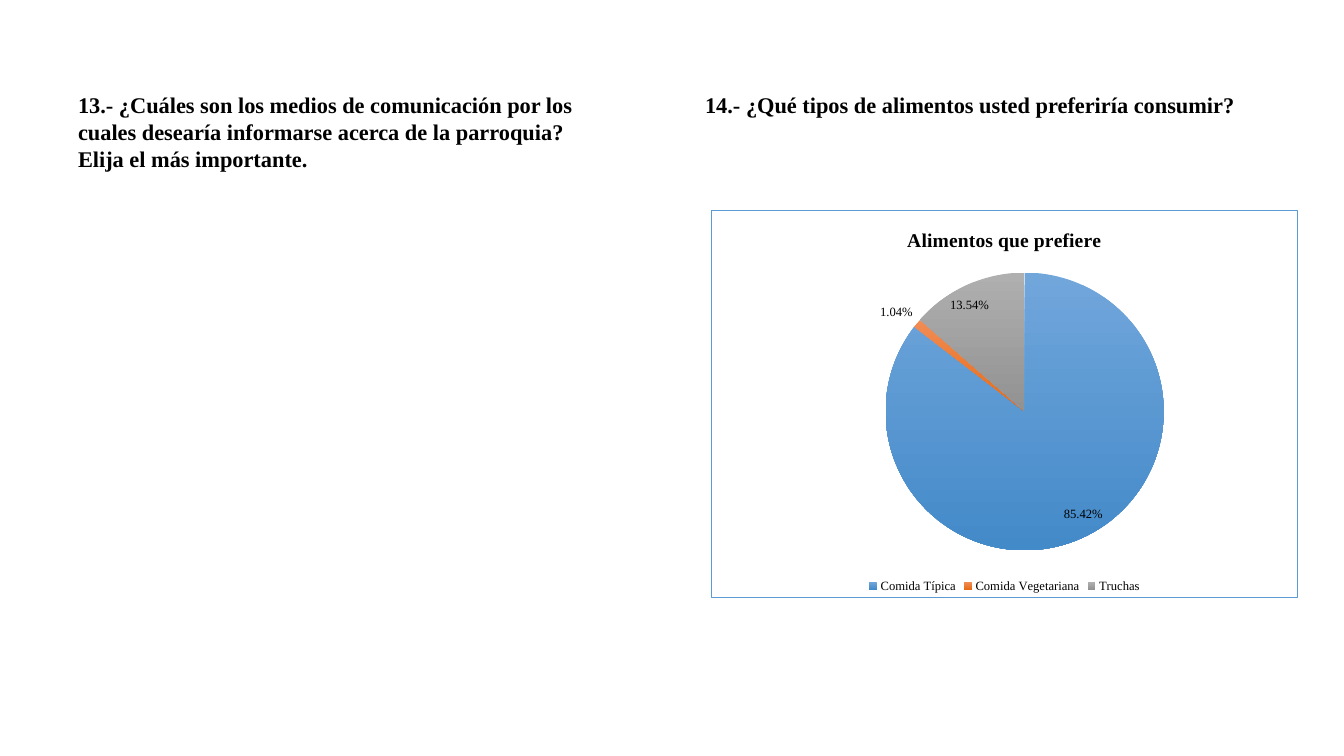
"""Builds a survey slide with two questions and a pie chart of preferred foods."""
from lxml import etree
from pptx import Presentation, util as u
from pptx.chart.data import CategoryChartData
from pptx.dml.color import RGBColor
from pptx.enum import chart as kinds, text
from pptx.oxml import ns, parse_xml

FONT = "Times New Roman"
PX = 914400 / 100.8


def px(*vals):
    return [u.Emu(round(val * PX)) for val in vals]


def paint(font, size, bold=False, hue="000000"):
    font.name, font.size, font.bold = FONT, u.Pt(size), bold
    font.color.rgb = RGBColor.from_string(hue)


deck = Presentation()
deck.slide_width, deck.slide_height = px(1344, 756)
slide = deck.slides.add_slide(deck.slide_layouts.get_by_name("Comparison"))

asks = [
    (0, (68, 86, 553, 92), True, "13.- ¿Cuáles son los medios de comunicación por los "
     "cuales desearía informarse acerca de la parroquia? Elija el más importante."),
    (1, (695, 86, 563, 37), False, "14.- ¿Qué tipos de alimentos usted preferiría consumir?"),
]
used = [ask[0] for ask in asks]
for hold in list(slide.placeholders):
    if hold.placeholder_format.idx not in used:
        hold.element.getparent().remove(hold.element)

for idx, area, wrap, words in asks:
    box = slide.placeholders[idx]
    box.left, box.top, box.width, box.height = px(*area)
    frame = box.text_frame
    frame.word_wrap = wrap
    frame.auto_size = text.MSO_AUTO_SIZE.SHAPE_TO_FIT_TEXT
    frame.vertical_anchor = text.MSO_ANCHOR.TOP
    para = frame.paragraphs[0]
    para.alignment = text.PP_ALIGN.LEFT
    para.space_before = u.Pt(0)
    run = para.add_run()
    run.text = words
    paint(run.font, 16, True)

data = CategoryChartData(number_format="0.00%")
data.categories = ["Comida Típica", "Comida Vegetariana", "Truchas"]
data.add_series("Series 1", [0.8542, 0.0104, 0.1354])
chart = slide.shapes.add_chart(
    kinds.XL_CHART_TYPE.PIE, *px(711, 210, 587, 388), data).chart
paint(chart.font, 9)

chart.has_title = True
run = chart.chart_title.text_frame.paragraphs[0].add_run()
run.text = "Alimentos que prefiere"
paint(run.font, 14, True)
chart.has_legend = True
chart.legend.position = kinds.XL_LEGEND_POSITION.BOTTOM
chart.legend.include_in_layout = False
paint(chart.legend.font, 9)

plot = chart.plots[0]
plot.vary_by_categories = True
plot.has_data_labels = True
labels = plot.data_labels
labels.show_value, labels.show_percentage = True, False
labels.number_format, labels.number_format_is_linked = "0.00%", False
labels.position = kinds.XL_LABEL_POSITION.BEST_FIT
paint(labels.font, 9)

shades = [("71A6DB", "438AC9"), ("F18C55", "E56B17"), ("AFAFAF", "929292")]
for num, pair in enumerate(shades):
    form = plot.series[0].points[num].format
    form.line.fill.background()
    form.fill.gradient()
    form.fill.gradient_angle = 270
    for stop, hue in zip(form.fill.gradient_stops, pair):
        stop.color.rgb = RGBColor.from_string(hue)

root = chart.element
body = root.find(ns.qn("c:chart"))
area = body.find(ns.qn("c:plotArea"))
for old in area.findall(ns.qn("c:layout")):
    area.remove(old)
lay = etree.Element(ns.qn("c:layout"))
hand = etree.SubElement(lay, ns.qn("c:manualLayout"))
rules = [("layoutTarget", "inner"), ("xMode", "edge"), ("yMode", "edge"),
         ("x", "0.297"), ("y", "0.16"), ("w", "0.475"), ("h", "0.719")]
for name, val in rules:
    etree.SubElement(hand, ns.qn("c:" + name)).set("val", val)
area.insert(0, lay)

for old in root.findall(ns.qn("c:roundedCorners")):
    root.remove(old)
edge = etree.Element(ns.qn("c:roundedCorners"))
edge.set("val", "0")
body.addprevious(edge)
body.addnext(parse_xml(
    f'<c:spPr {ns.nsdecls("c", "a")}>'
    '<a:solidFill><a:srgbClr val="FFFFFF"/></a:solidFill>'
    '<a:ln w="12700"><a:solidFill><a:srgbClr val="5B9BD5"/></a:solidFill></a:ln>'
    '</c:spPr>'))

deck.save("out.pptx")
